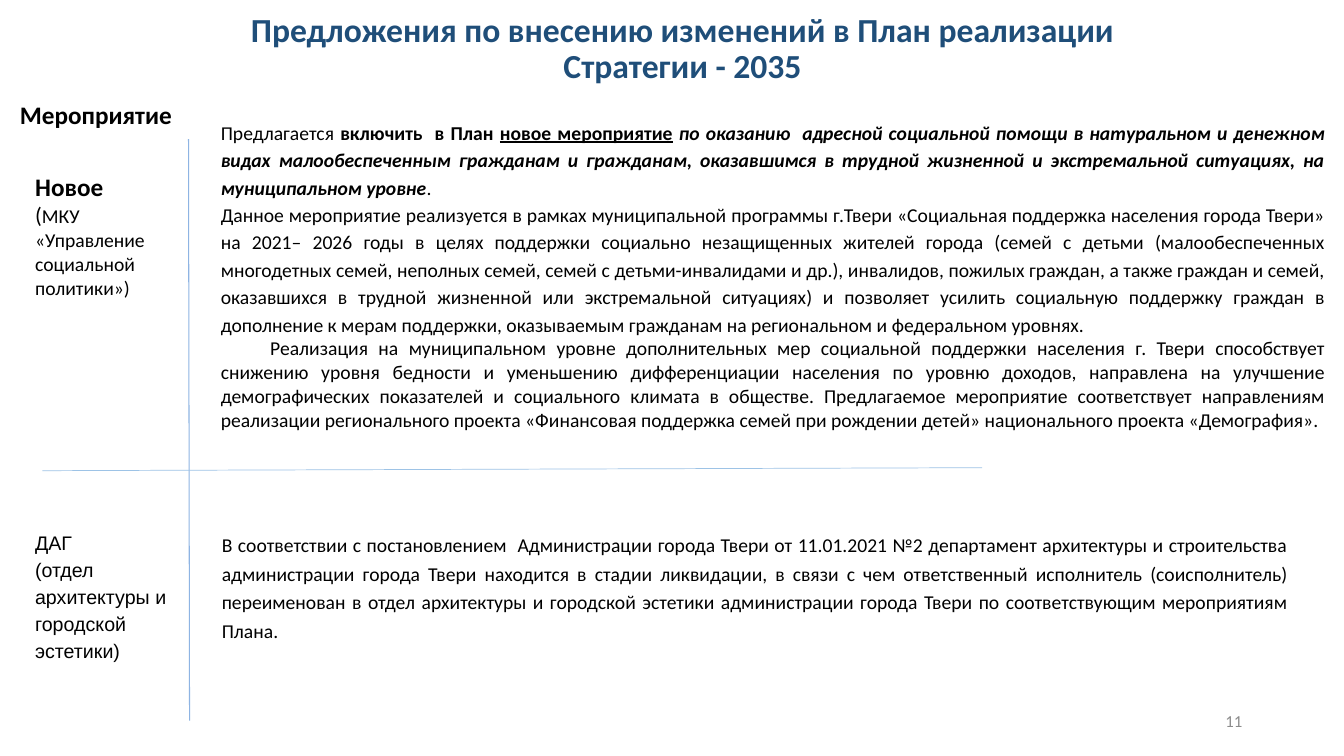
"""Build the slide on proposed changes to the Strategy 2035 plan."""
from lxml.etree import SubElement
from pptx import Presentation
from pptx.dml.color import RGBColor
from pptx.enum.shapes import MSO_CONNECTOR
from pptx.enum.text import MSO_ANCHOR, PP_ALIGN
from pptx.oxml.ns import qn
from pptx.util import Inches, Pt

BLACK = RGBColor(0, 0, 0)
NAVY = RGBColor(0x1F, 0x4E, 0x79)
GRAY = RGBColor(0x8C, 0x8C, 0x8C)
BLUE = RGBColor(0x8E, 0xB4, 0xE3)
SKY = RGBColor(0x9D, 0xC3, 0xE6)

LEFT, MID, RIGHT, FULL = PP_ALIGN.LEFT, PP_ALIGN.CENTER, PP_ALIGN.RIGHT, PP_ALIGN.JUSTIFY
BASE = dict(size=14, face="Calibri", color=BLACK, bold=False, align=LEFT, gap=1, indent=0)
TITLE = dict(size=24, color=NAVY, bold=True, align=MID, gap=0.9)
HEAD = dict(size=18, bold=True)
OFFICE = dict(face="Arial", gap=1.15)
BODY = dict(align=FULL, gap=1.15)

TEXTS = [
    ((9.42, 6.95, 3, 0.4), MSO_ANCHOR.MIDDLE, True, [
        (dict(size=12, color=GRAY, align=RIGHT), [("11", "")])]),
    ((0.42, 0.2, 12.7, 0.59), MSO_ANCHOR.MIDDLE, True, [
        (TITLE, [("Предложения по внесению изменений в План реализации", "")]),
        (TITLE, [(" Стратегии - 2035 ", "")])]),
    ((0.1, 0.94, 1.77, 0.4), MSO_ANCHOR.TOP, False, [(HEAD, [("Мероприятие", "")])]),
    ((0.25, 1.65, 1.62, 1.62), MSO_ANCHOR.TOP, True, [
        (HEAD, [("Новое", "")]),
        ({}, [("(", "L"), ("МКУ «Управление", "")]),
        ({}, [("социальной политики»)", "")])]),
    ((0.25, 5.18, 1.64, 1.46), MSO_ANCHOR.TOP, True, [
        (OFFICE, [("ДАГ", "")]),
        (OFFICE, [("(отдел архитектуры и городской эстетики)", "")])]),
]
TABLES = [
    ((2.07, 1.17, 11.2, 3.15), [
        (BODY, [
            ("Предлагается ", ""), ("включить  в План ", "B"), ("новое мероприятие", "BU"),
            (" по оказанию  адресной социальной помощи в натуральном и денежном видах "
             "малообеспеченным гражданам и гражданам, оказавшимся в трудной жизненной и "
             "экстремальной ситуациях, на муниципальном уровне", "BI"), (".", "")]),
        (BODY, [
            ("Данное мероприятие реализуется в рамках муниципальной программы г.Твери "
             "«Социальная поддержка населения города Твери» на 2021– 2026 годы в целях "
             "поддержки социально незащищенных жителей города (семей с детьми "
             "(малообеспеченных многодетных семей, неполных семей, семей с "
             "детьми-инвалидами и др.), инвалидов, пожилых граждан, а также граждан и "
             "семей, оказавшихся в трудной жизненной или экстремальной ситуациях) и "
             "позволяет усилить социальную поддержку граждан в дополнение к мерам "
             "поддержки, оказываемым гражданам на региональном и федеральном уровнях. ", "")]),
        (dict(align=FULL, indent=0.49), [
            ("Реализация на муниципальном уровне дополнительных мер социальной поддержки "
             "населения г. Твери способствует снижению уровня бедности и уменьшению "
             "дифференциации населения по уровню доходов, направлена на улучшение "
             "демографических показателей и социального климата в обществе. Предлагаемое "
             "мероприятие соответствует направлениям реализации регионального проекта "
             "«Финансовая поддержка семей при рождении детей» национального проекта "
             "«Демография». ", "")])]),
    ((2.08, 5.25, 10.82, 1.12), [
        (dict(align=FULL, gap=1.2), [
            ("В соответствии с постановлением  Администрации города Твери от 11.01.2021 №2 "
             "департамент архитектуры и строительства администрации города Твери находится "
             "в стадии ликвидации, в связи с чем ответственный исполнитель (соисполнитель) "
             "переименован в отдел архитектуры и городской эстетики администрации города "
             "Твери по соответствующим мероприятиям Плана.", "")])]),
]
LINES = [((1.87, 1.38, 1.88, 7.15), BLUE, 0.75), ((9.74, 4.64, 0.42, 4.67), SKY, 0.5)]


def write(frame, paras):
    for i, (style, runs) in enumerate(paras):
        look = BASE | style
        para = frame.paragraphs[0] if i == 0 else frame.add_paragraph()
        para.alignment, para.line_spacing = look["align"], look["gap"]
        if look["indent"]:
            para._p.get_or_add_pPr().set("indent", str(Inches(look["indent"])))
        font = para.font
        font.name, font.size, font.bold = look["face"], Pt(look["size"]), look["bold"]
        font.color.rgb = look["color"]
        for text, marks in runs:
            run = para.add_run()
            run.text = text
            if "B" in marks:
                run.font.bold = True
            if "I" in marks:
                run.font.italic = True
            if "U" in marks:
                run.font.underline = True
            if "L" in marks:
                run.font.size = Pt(16)


def add_text(slide, box, anchor, wrap, paras):
    frame = slide.shapes.add_textbox(*map(Inches, box)).text_frame
    frame.word_wrap, frame.vertical_anchor = wrap, anchor
    write(frame, paras)


def add_grid(slide, box, paras):
    table = slide.shapes.add_table(1, 1, *map(Inches, box)).table
    table.first_row = table.horz_banding = False
    cell = table.cell(0, 0)
    for side in ("lnL", "lnR", "lnT", "lnB"):
        edge = SubElement(cell._tc.get_or_add_tcPr(), qn(f"a:{side}"), w="0")
        SubElement(edge, qn("a:noFill"))
    cell.fill.background()
    cell.margin_left = cell.margin_right = Inches(0.12)
    cell.margin_top = cell.margin_bottom = 0
    write(cell.text_frame, paras)


def add_line(slide, ends, color, width):
    line = slide.shapes.add_connector(MSO_CONNECTOR.STRAIGHT, *map(Inches, ends))
    line.line.color.rgb, line.line.width = color, Pt(width)
    SubElement(line._element.spPr, qn("a:effectLst"))


def main():
    deck = Presentation()
    deck.slide_width, deck.slide_height = Inches(13.33), Inches(7.5)
    slide = deck.slides.add_slide(deck.slide_layouts[6])
    for item in LINES:
        add_line(slide, *item)
    for item in TEXTS:
        add_text(slide, *item)
    for item in TABLES:
        add_grid(slide, *item)
    deck.save("out.pptx")


if __name__ == "__main__":
    main()
